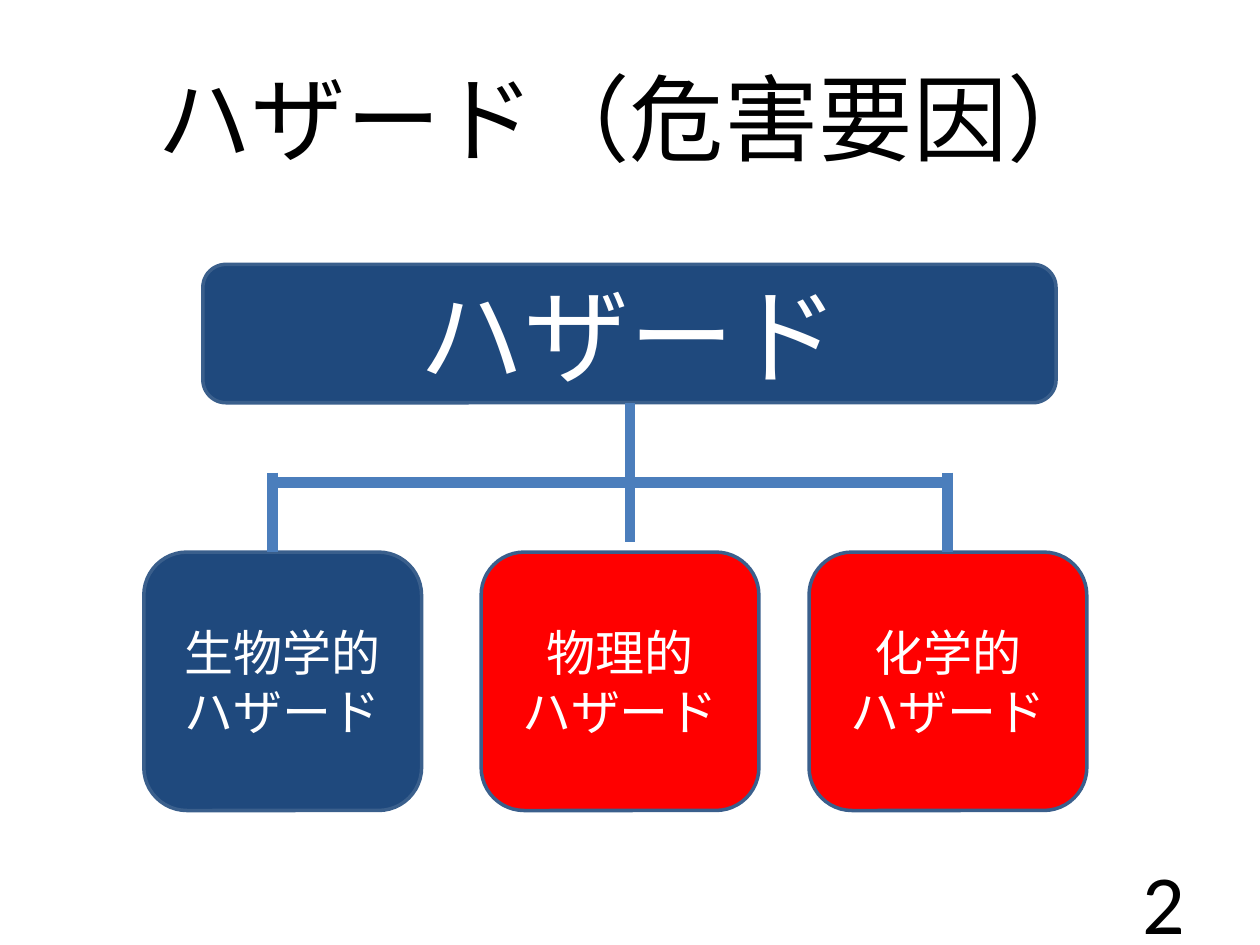
"""Builds the hazard classification slide: one root box branching to three kinds."""
import lxml.etree
import pptx
import pptx.dml.color
import pptx.enum.shapes
import pptx.enum.text
import pptx.oxml.ns
import pptx.util
from dataclasses import dataclass

Cm = pptx.util.Cm
Align = pptx.enum.text.PP_ALIGN


@dataclass(frozen=True)
class Theme:
    navy: str = "1F497D"
    red: str = "FF0000"
    border: str = "3A5F8C"
    branch: str = "4B7EBC"
    white: str = "FFFFFF"
    black: str = "000000"
    body_font: str = "Arial"
    number_font: str = "Calibri"
    title_size: int = 54
    root_size: int = 60
    kind_size: int = 28
    number_size: int = 48
    border_width: int = 2
    branch_width: int = 6


THEME = Theme()

TITLE = "ハザード（危害要因）"
ROOT = "ハザード"
KINDS = [
    (["生物学的", "ハザード"], THEME.navy, 2.9),
    (["物理的", "ハザード"], THEME.red, 9.7),
    (["化学的", "ハザード"], THEME.red, 16.31),
]
PAGE_NUMBER = "2"

SLIDE_WIDTH, SLIDE_HEIGHT = 25.4, 19.05
TITLE_AREA = (1.27, 0.76, 22.86, 3.18)
ROOT_AREA = (4.09, 5.33, 17.2, 2.79)
NUMBER_AREA = (18.21, 17.65, 5.92, 1.02)
KIND_TOP, KIND_WIDTH, KIND_HEIGHT = 11.13, 5.6, 5.21
BAR_Y, DROP_TOP, TRUNK_BOTTOM = 9.73, 9.53, 10.92
BAR_LEFT, BAR_RIGHT = 5.49, 19.1


def rgb(colour):
    return pptx.dml.color.RGBColor.from_string(colour)


def write(holder, lines, size, colour, font=THEME.body_font, align=Align.CENTER):
    frame = holder.text_frame
    frame.word_wrap = True
    frame.vertical_anchor = pptx.enum.text.MSO_ANCHOR.MIDDLE
    for index, line in enumerate(lines):
        paragraph = frame.add_paragraph() if index else frame.paragraphs[0]
        paragraph.alignment = align
        run = paragraph.add_run()
        run.text = line
        run.font.name = font
        run.font.size = pptx.util.Pt(size)
        run.font.color.rgb = rgb(colour)


def add_label(slide, area, *text, **style):
    write(slide.shapes.add_textbox(*map(Cm, area)), *text, **style)


def add_hazard(slide, area, lines, size, fill):
    hazard = slide.shapes.add_shape(
        pptx.enum.shapes.MSO_SHAPE.ROUNDED_RECTANGLE, *map(Cm, area))
    hazard.shadow.inherit = False
    hazard.fill.solid()
    hazard.fill.fore_color.rgb = rgb(fill)
    hazard.line.color.rgb = rgb(THEME.border)
    hazard.line.width = pptx.util.Pt(THEME.border_width)
    write(hazard, lines, size, THEME.white)


def add_branch(slide, *ends):
    branch = slide.shapes.add_connector(
        pptx.enum.shapes.MSO_CONNECTOR.STRAIGHT, *map(Cm, ends))
    branch.line.color.rgb = rgb(THEME.branch)
    branch.line.width = pptx.util.Pt(THEME.branch_width)
    lxml.etree.SubElement(branch._element.spPr, pptx.oxml.ns.qn("a:effectLst"))


def main():
    deck = pptx.Presentation()
    deck.slide_width, deck.slide_height = Cm(SLIDE_WIDTH), Cm(SLIDE_HEIGHT)
    slide = deck.slides.add_slide(deck.slide_layouts[6])

    add_label(slide, TITLE_AREA, [TITLE], THEME.title_size, THEME.black)
    add_hazard(slide, ROOT_AREA, [ROOT], THEME.root_size, THEME.navy)
    for lines, fill, left in KINDS:
        area = (left, KIND_TOP, KIND_WIDTH, KIND_HEIGHT)
        add_hazard(slide, area, lines, THEME.kind_size, fill)

    trunk_x = SLIDE_WIDTH / 2
    root_bottom = ROOT_AREA[1] + ROOT_AREA[3]
    add_branch(slide, BAR_LEFT, BAR_Y, BAR_RIGHT, BAR_Y)
    add_branch(slide, trunk_x, root_bottom, trunk_x, TRUNK_BOTTOM)
    for drop_x in (BAR_LEFT, BAR_RIGHT):
        add_branch(slide, drop_x, DROP_TOP, drop_x, KIND_TOP)

    add_label(slide, NUMBER_AREA, [PAGE_NUMBER], THEME.number_size, THEME.black,
              font=THEME.number_font, align=Align.RIGHT)
    deck.save("out.pptx")


if __name__ == "__main__":
    main()
